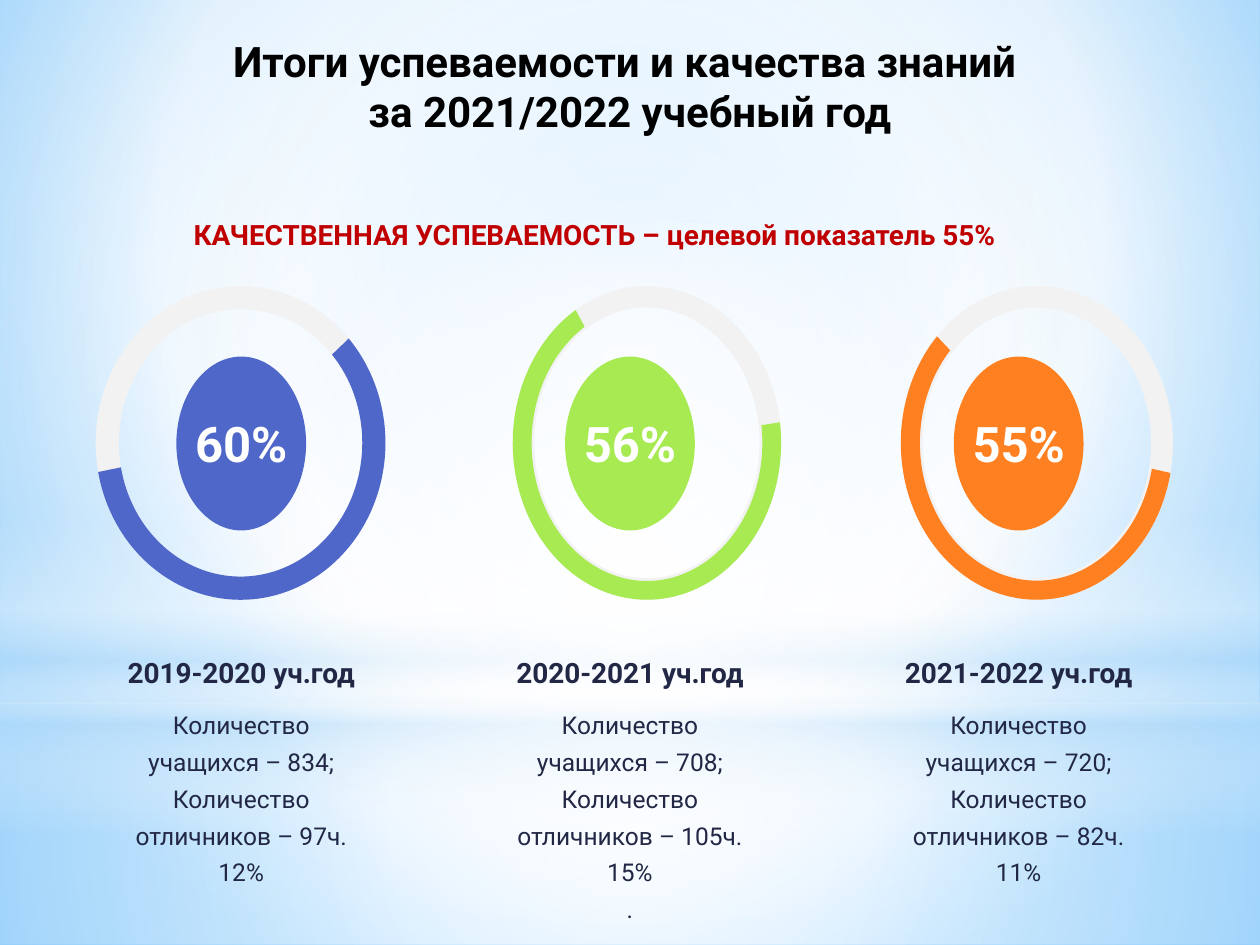
from lxml import etree
from pptx import Presentation
from pptx.dml.color import RGBColor
from pptx.enum.shapes import MSO_SHAPE
from pptx.enum.text import MSO_ANCHOR, MSO_AUTO_SIZE, PP_ALIGN
from pptx.oxml.ns import qn
from pptx.util import Inches, Pt

RECTANGLE, OVAL = MSO_SHAPE.RECTANGLE, MSO_SHAPE.OVAL
DONUT, BLOCK_ARC = MSO_SHAPE.DONUT, MSO_SHAPE.BLOCK_ARC
TOP, MIDDLE = MSO_ANCHOR.TOP, MSO_ANCHOR.MIDDLE
GROW, CENTER = MSO_AUTO_SIZE.SHAPE_TO_FIT_TEXT, PP_ALIGN.CENTER
COLOR = RGBColor.from_string
FONT = "Roboto"
NAVY = "212745"
COLUMN_STEP = 3.085


def paint_gradient(element, stops, focus):
    gradient = etree.Element(qn("a:gradFill"), rotWithShape="1")
    stop_list = etree.SubElement(gradient, qn("a:gsLst"))
    for position, color, opacity in stops:
        stop = etree.SubElement(stop_list, qn("a:gs"), pos=str(position * 1000))
        tint = etree.SubElement(stop, qn("a:srgbClr"), val=color)
        if opacity < 100:
            etree.SubElement(tint, qn("a:alpha"), val=str(opacity * 1000))
    if focus:
        radial = etree.SubElement(gradient, qn("a:path"), attrib={"path": "circle"})
        edges = {side: str(value * 1000) for side, value in zip("ltrb", focus)}
        etree.SubElement(radial, qn("a:fillToRect"), attrib=edges)
    else:
        etree.SubElement(gradient, qn("a:lin"), ang="5400000", scaled="0")
    solid = element.find(".//" + qn("a:solidFill"))
    solid.getparent().replace(solid, gradient)


def add_text(shapes, place, lines, size, color, bold=True, wrap=False, spacing=None, anchor=TOP):
    box = shapes.add_textbox(*[Inches(value) for value in place])
    frame = box.text_frame
    frame.word_wrap = wrap
    frame.auto_size = GROW
    frame.vertical_anchor = anchor
    for index, line in enumerate(lines):
        para = frame.add_paragraph() if index else frame.paragraphs[0]
        para.alignment = CENTER
        if spacing:
            para.line_spacing = spacing
        span = para.add_run()
        span.text = line
        span.font.name = FONT
        span.font.size = Pt(size)
        span.font.bold = bold
        span.font.color.rgb = COLOR(color)


deck = Presentation()
deck.slide_width = Inches(10)
deck.slide_height = Inches(7.5)
page = deck.slides.add_slide(deck.slide_layouts[6])

page.background.fill.solid()
page.background.fill.fore_color.rgb = COLOR("FFFFFF")
sky = [(0, "9ED5FF", 100), (60, "FFFFFF", 100), (100, "5BB9FF", 100)]
paint_gradient(page.element, sky, (20, 10, 20, 60))

middle = (50, 50, 50, 50)
glows = [
    (RECTANGLE, 5.58, 1.92, [(0, "FFFFFF", 91), (37, "FFFFFF", 76), (100, "B4DCFA", 79)], middle),
    (RECTANGLE, 0, 5.58, [(0, "FFFFFF", 89), (48, "FFFFFF", 62), (100, "B4DCFA", 79)], middle),
    (RECTANGLE, 4.12, 2.5, [(0, "FFFFFF", 0), (29, "FFFFFF", 30), (45, "B4DCFA", 40),
                            (55, "FFFFFF", 26), (65, "B4DCFA", 60), (100, "FFFFFF", 0)], None),
    (OVAL, 1.75, 5.58, [(0, "FFFFFF", 100), (56, "FFFFFF", 0)], middle),
]
for kind, top, height, stops, focus in glows:
    glow = page.shapes.add_shape(kind, 0, Inches(top), Inches(10), Inches(height))
    glow.shadow.inherit = False
    glow.line.fill.background()
    glow.fill.solid()
    glow.fill.fore_color.rgb = COLOR("FFFFFF")
    paint_gradient(glow.element, stops, focus)

title = ["Итоги успеваемости и качества знаний ", "за 2021/2022 учебный год"]
add_text(page.shapes, (0.33, 0.23, 9.34, 0.91), title, 24, "000000", wrap=True)
target = ["КАЧЕСТВЕННАЯ УСПЕВАЕМОСТЬ – целевой показатель 55%"]
add_text(page.shapes, (1.42, 1.68, 6.6, 0.37), target, 16, "C00000")

years = [
    ("2019-2020", "60%", "4E67C8", 0.76, 2.3, (6.93, 134.39, 0.08),
     ["Количество учащихся – 834; Количество отличников – 97ч. 12%"]),
    ("2020-2021", "56%", "A7EA52", 4.07, 2.13, (178.93, 113.28, 0.07),
     ["Количество учащихся – 708; Количество отличников – 105ч. 15%", "."]),
    ("2021-2022", "55%", "FF8021", 7.15, 2.16, (187.89, 100.39, 0.07),
     ["Количество учащихся – 720; Количество отличников – 82ч. 11%"]),
]
for column, (year, share, color, ring_left, ring_width, arc, details) in enumerate(years):
    shift = column * COLUMN_STEP
    ring = page.shapes.add_group_shape()
    badge = page.shapes.add_group_shape()
    parts = [
        (ring, DONUT, ring_left, 2.27, ring_width, 2.49, "F2F2F2", (0.08,)),
        (ring, BLOCK_ARC, ring_left, 2.27, ring_width, 2.49, color, arc),
        (badge, OVAL, 1.4 + shift, 2.83, 1.03, 1.38, color, ()),
    ]
    for group, kind, left, top, width, height, fill, adjustments in parts:
        part = group.shapes.add_shape(kind, Inches(left), Inches(top), Inches(width), Inches(height))
        part.shadow.inherit = False
        part.line.fill.background()
        part.fill.solid()
        part.fill.fore_color.rgb = COLOR(fill)
        for index, value in enumerate(adjustments):
            part.adjustments[index] = value
        if kind == BLOCK_ARC:
            part.element.spPr.find(qn("a:xfrm")).set("flipH", "1")
    add_text(badge.shapes, (1.45 + shift, 3.23, 0.93, 0.57), [share], 28, "FFFFFF", anchor=MIDDLE)
    add_text(page.shapes, (0.86 + shift, 5.15, 2.11, 0.37), [year + " уч.год"], 16, NAVY)
    details_place = (0.91 + shift, 5.53, 2.01, 1.27 + 0.3 * len(details))
    add_text(page.shapes, details_place, details, 14, NAVY, bold=False, wrap=True, spacing=1.25)

deck.save("out.pptx")
